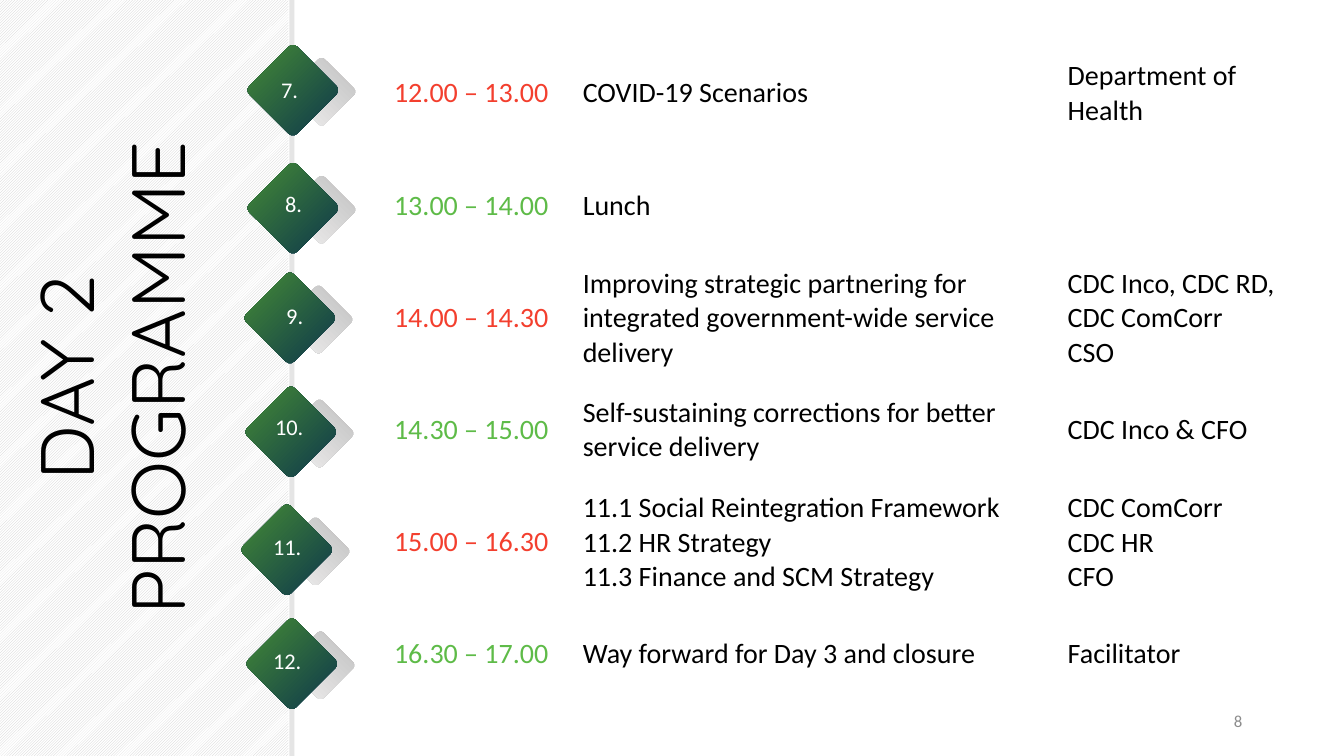
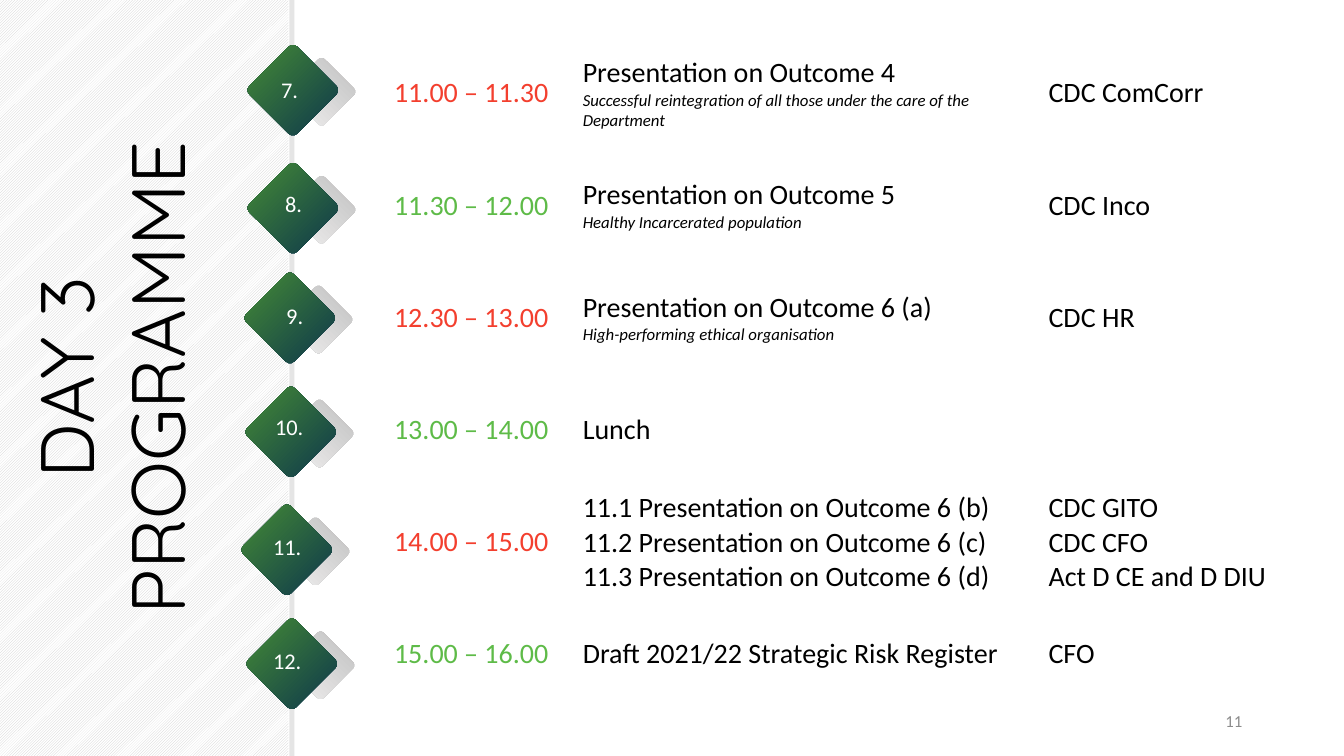
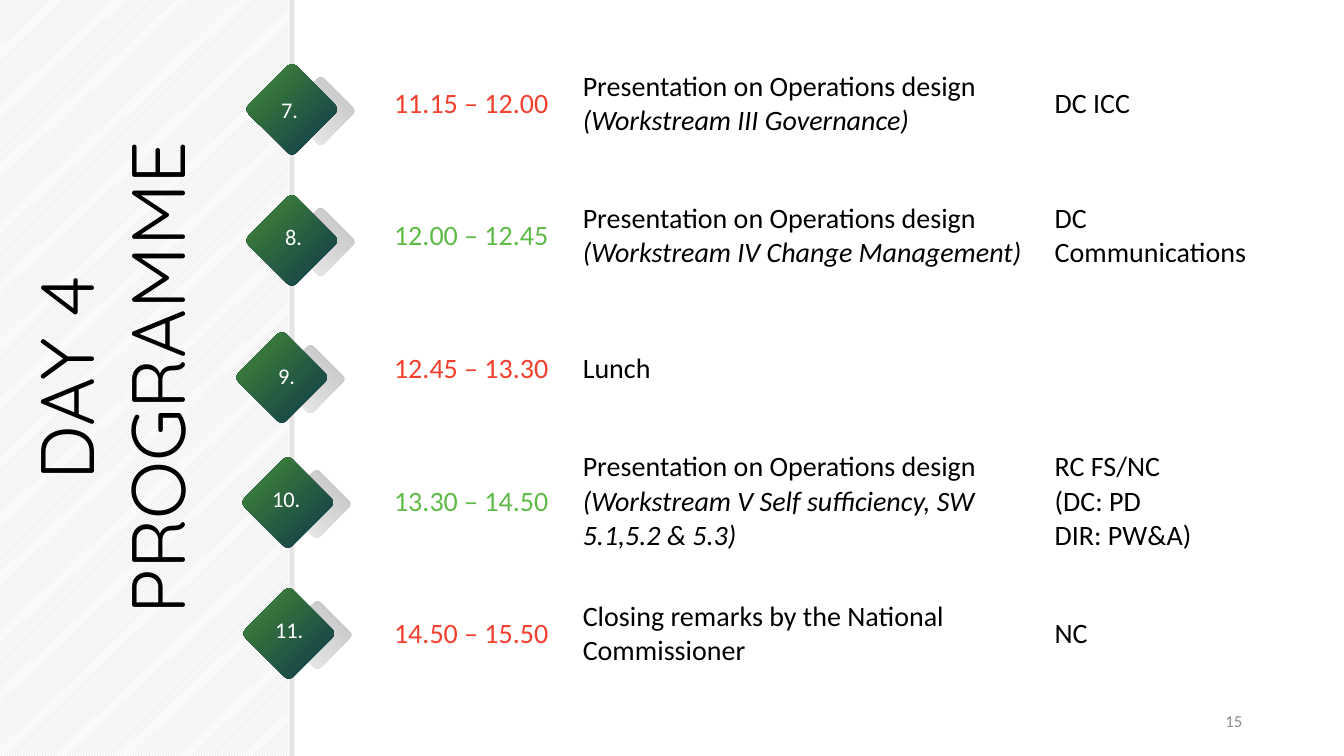
from pptx import Presentation
from pptx.dml.color import RGBColor
from pptx.enum.dml import MSO_PATTERN
from pptx.enum.shapes import MSO_SHAPE
from pptx.enum.text import MSO_ANCHOR, MSO_AUTO_SIZE, PP_ALIGN
from pptx.util import Emu, Pt

EMU_PER_PX = 9144  # 100 px to the inch
SLIDE_W, SLIDE_H = 1333, 750
TITLE_FONT, BODY_FONT = "Quicksand", "Calibri"
BLACK, WHITE, GREY = "000000", "FFFFFF", "8C8C8C"
STRIPE, EDGE = "CECECE", "E5E5E5"
TIME_COLOURS = ("F33F2E", "5EBB48")
FRONT_GRADIENT = ("0C344C", "468E35")
BACK_GRADIENT = ("BFBEBE", "F2F2F2")
FRONT_SIZE, BACK_SIZE = 67, 50
BACK_OFFSET = (37, 10)

# Each marker: label, diamond left and top, label left and top
SIX_MARKERS = [
    ("7.", (257, 56), (269, 71)),
    ("8.", (257, 173), (273, 184)),
    ("9.", (254, 282), (274, 295)),
    ("10.", (255, 395), (263, 405)),
    ("11.", (251, 512), (261, 524)),
    ("12.", (256, 625), (261, 637)),
]
FIVE_MARKERS = [
    ("7.", (256, 75), (269, 90)),
    ("8.", (256, 205), (273, 216)),
    ("9.", (246, 341), (266, 354)),
    ("10.", (252, 465), (260, 476)),
    ("11.", (253, 595), (263, 606)),
]

# Each row: time, topic lines, note in italics, presenters
DAYS = [
    {
        "title": "DAY 2 PROGRAMME", "number": "8", "markers": SIX_MARKERS,
        "columns": (201, 481, 227), "height": 668, "note_size": 12,
        "rows": [
            ("12.00 – 13.00", ["COVID-19 Scenarios"], "", ["Department of Health"]),
            ("13.00 – 14.00", ["Lunch"], "", []),
            ("14.00 – 14.30",
             ["Improving strategic partnering for integrated government-wide service delivery"],
             "", ["CDC Inco, CDC RD,", "CDC ComCorr", "CSO"]),
            ("14.30 – 15.00", ["Self-sustaining corrections for better service delivery"],
             "", ["CDC Inco & CFO"]),
            ("15.00 – 16.30",
             ["11.1 Social Reintegration Framework", "11.2 HR Strategy",
              "11.3 Finance and SCM Strategy"],
             "", ["CDC ComCorr", "CDC HR", "CFO"]),
            ("16.30 – 17.00", ["Way forward for Day 3 and closure"], "", ["Facilitator"]),
        ],
    },
    {
        "title": "DAY 3 PROGRAMME", "number": "11", "markers": SIX_MARKERS,
        "columns": (201, 462, 247), "height": 668, "note_size": 12,
        "rows": [
            ("11.00 – 11.30", ["Presentation on Outcome 4"],
             "Successful reintegration of all those under the care of the Department",
             ["CDC ComCorr"]),
            ("11.30 – 12.00", ["Presentation on Outcome 5"],
             "Healthy Incarcerated population", ["CDC Inco"]),
            ("12.30 – 13.00", ["Presentation on Outcome 6 (a)"],
             "High-performing ethical organisation", ["CDC HR"]),
            ("13.00 – 14.00", ["Lunch"], "", []),
            ("14.00 – 15.00",
             ["11.1 Presentation on Outcome 6 (b)", "11.2 Presentation on Outcome 6 (c)",
              "11.3 Presentation on Outcome 6 (d)"],
             "", ["CDC GITO", "CDC CFO", "Act D CE and D DIU"]),
            ("15.00 – 16.00", ["Draft 2021/22 Strategic Risk Register"], "", ["CFO"]),
        ],
    },
    {
        "title": "DAY 4 PROGRAMME", "number": "15", "markers": FIVE_MARKERS,
        "columns": (201, 468, 240), "height": 658, "note_size": 20,
        "rows": [
            ("11.15 – 12.00", ["Presentation on Operations design"],
             "(Workstream III Governance)", ["DC ICC"]),
            ("12.00 – 12.45", ["Presentation on Operations design"],
             "(Workstream IV Change Management)", ["DC Communications"]),
            ("12.45 – 13.30", ["Lunch"], "", []),
            ("13.30 – 14.50", ["Presentation on Operations design"],
             "(Workstream V Self sufficiency, SW 5.1,5.2 & 5.3)",
             ["RC FS/NC", "(DC: PD", "DIR: PW&A)"]),
            ("14.50 – 15.50", ["Closing remarks by the National Commissioner"], "", ["NC"]),
        ],
    },
]


def px(length):
    return Emu(round(length * EMU_PER_PX))


def colour(value):
    return RGBColor.from_string(value)


def write_lines(frame, lines, align=PP_ALIGN.LEFT):
    """Write (text, size, colour, font, italic) lines, one paragraph each."""
    for index, (text, size, shade, font, italic) in enumerate(lines):
        para = frame.add_paragraph() if index else frame.paragraphs[0]
        para.alignment = align
        span = para.add_run()
        span.text = text
        span.font.size = Pt(size)
        span.font.name = font
        span.font.italic = italic
        span.font.color.rgb = colour(shade)


def add_plain_shape(shapes, preset, left, top, width, height):
    shape = shapes.add_shape(preset, px(left), px(top), px(width), px(height))
    shape.shadow.inherit = False
    shape.line.fill.background()
    return shape


def add_bands_to_layout(page):
    """Draw the side bands on the page, then move them to its layout."""
    side = add_plain_shape(page.shapes, MSO_SHAPE.RECTANGLE, -1, 0, 287, SLIDE_H)
    side.fill.patterned()
    side.fill.pattern = MSO_PATTERN.LIGHT_UPWARD_DIAGONAL
    side.fill.fore_color.rgb = colour(STRIPE)
    side.fill.back_color.rgb = colour(WHITE)
    edge = add_plain_shape(page.shapes, MSO_SHAPE.RECTANGLE, 287, 0, 5, SLIDE_H)
    edge.fill.solid()
    edge.fill.fore_color.rgb = colour(EDGE)
    for index, band in enumerate((side, edge), start=2):
        page.slide_layout.shapes.element.insert(index, band.element)


def add_title(page, text):
    title = page.shapes.title
    title.left, title.top, title.width, title.height = map(px, (-187, 284, 594, 182))
    title.rotation = 270
    frame = title.text_frame
    frame.margin_left = frame.margin_right = frame.margin_top = frame.margin_bottom = 0
    frame.word_wrap = True
    frame.auto_size = MSO_AUTO_SIZE.SHAPE_TO_FIT_TEXT
    frame.vertical_anchor = MSO_ANCHOR.TOP
    write_lines(frame, [(text, 54, BLACK, TITLE_FONT, False)], PP_ALIGN.CENTER)


def add_text(page, left, top, width, height, line, align=PP_ALIGN.LEFT,
             anchor=MSO_ANCHOR.TOP):
    box = page.shapes.add_textbox(px(left), px(top), px(width), px(height))
    box.text_frame.word_wrap = True
    box.text_frame.vertical_anchor = anchor
    write_lines(box.text_frame, [line], align)


def add_diamond(shapes, left, top, size, rotation, gradient):
    diamond = add_plain_shape(shapes, MSO_SHAPE.ROUNDED_RECTANGLE, left, top, size, size)
    diamond.adjustments[0] = 0.09
    diamond.rotation = rotation
    diamond.fill.gradient()
    diamond.fill.gradient_angle = 180
    for stop, shade in zip(diamond.fill.gradient_stops, gradient):
        stop.color.rgb = colour(shade)


def add_marker(page, label, diamond_at, label_at):
    left, top = diamond_at
    group = page.shapes.add_group_shape()
    add_diamond(group.shapes, left + BACK_OFFSET[0], top + BACK_OFFSET[1],
                BACK_SIZE, 315, BACK_GRADIENT)
    add_diamond(group.shapes, left, top, FRONT_SIZE, 45, FRONT_GRADIENT)
    width = 38 if len(label) == 2 else 68
    add_text(page, *label_at, width, 37, (label, 16, WHITE, BODY_FONT, False))


def add_programme(page, day):
    rows, columns = day["rows"], day["columns"]
    table = page.shapes.add_table(len(rows), len(columns), px(367), px(37),
                                  px(sum(columns)), px(day["height"])).table
    table.first_row = table.horz_banding = False
    for column, width in zip(table.columns, columns):
        column.width = px(width)
    for index, (time, topics, note, presenters) in enumerate(rows):
        table.rows[index].height = px(day["height"] / len(rows))
        time_colour = TIME_COLOURS[index % 2]
        topic_lines = [(text, 20, BLACK, BODY_FONT, False) for text in topics]
        if note:
            topic_lines.append((note, day["note_size"], BLACK, BODY_FONT, True))
        contents = [
            ([(time, 20, time_colour, BODY_FONT, False)], PP_ALIGN.CENTER),
            (topic_lines, PP_ALIGN.LEFT),
            ([(text, 20, BLACK, BODY_FONT, False) for text in presenters], PP_ALIGN.LEFT),
        ]
        for cell, (lines, align) in zip(table.rows[index].cells, contents):
            cell.fill.background()
            cell.vertical_anchor = MSO_ANCHOR.MIDDLE
            write_lines(cell.text_frame, lines, align)


def main():
    deck = Presentation()
    deck.slide_width, deck.slide_height = px(SLIDE_W), px(SLIDE_H)
    title_only = deck.slide_layouts[5]
    for index, day in enumerate(DAYS):
        page = deck.slides.add_slide(title_only)
        if index == 0:
            add_bands_to_layout(page)
        add_title(page, day["title"])
        add_text(page, 942, 695, 300, 40, (day["number"], 12, GREY, BODY_FONT, False),
                 PP_ALIGN.RIGHT, MSO_ANCHOR.MIDDLE)
        for marker in day["markers"]:
            add_marker(page, *marker)
        add_programme(page, day)
    deck.save("out.pptx")


if __name__ == "__main__":
    main()
